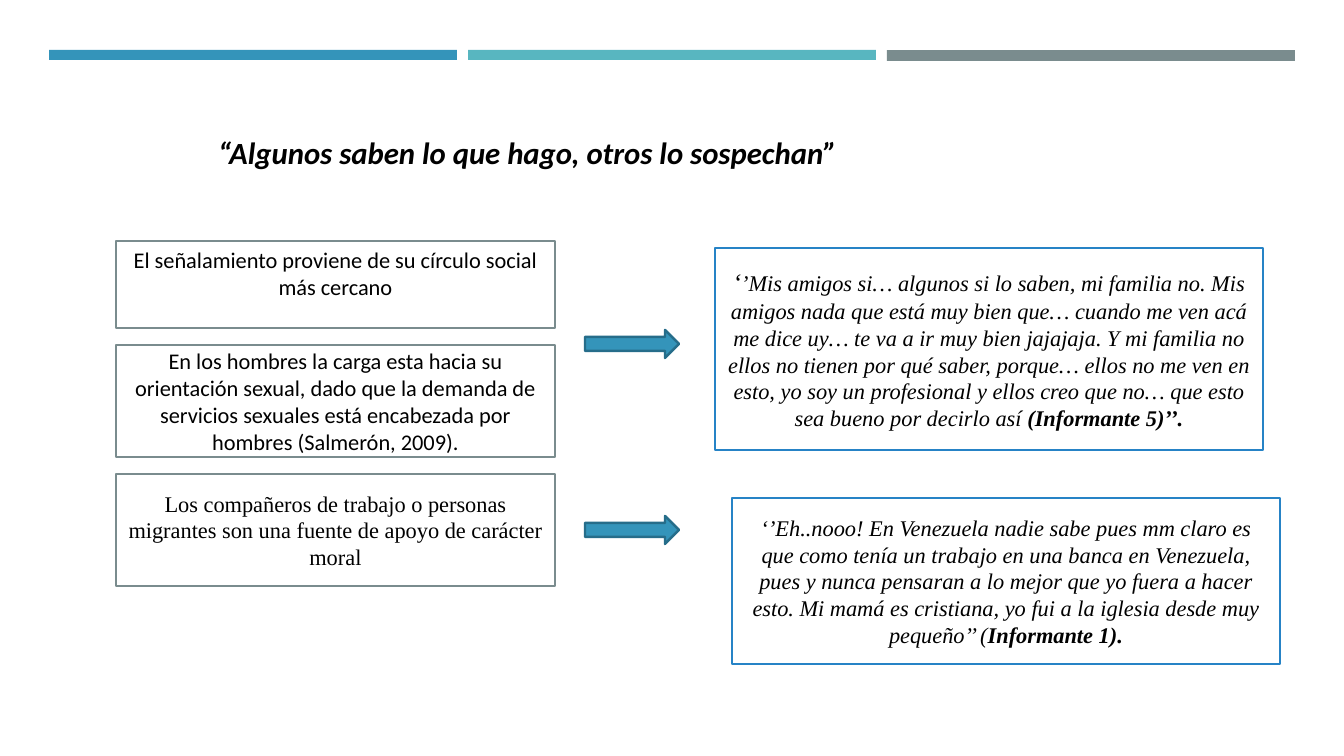
from pptx import Presentation
from pptx.dml.color import RGBColor
from pptx.enum.shapes import MSO_SHAPE
from pptx.enum.text import MSO_ANCHOR, MSO_AUTO_SIZE, PP_ALIGN
from pptx.util import Pt

EMU_PER_PX = 12192000 / 1344


def px(length):
    return round(length * EMU_PER_PX)


def add_block(preset, left, top, width, height, fill, line=None):
    block = slide.shapes.add_shape(preset, px(left), px(top), px(width), px(height))
    block.shadow.inherit = False
    block.fill.solid()
    block.fill.fore_color.rgb = RGBColor.from_string(fill)
    if line:
        block.line.color.rgb = RGBColor.from_string(line)
        block.line.width = Pt(1.75)
    else:
        block.line.fill.background()
    return block


deck = Presentation()
deck.slide_width = px(1344)
deck.slide_height = px(756)
slide = deck.slides.add_slide(deck.slide_layouts[5])

for column, (bar_color, bar_height) in enumerate([("3494BA", 10), ("58B6C0", 10), ("7A8C8E", 11)]):
    add_block(MSO_SHAPE.RECTANGLE, 49 + column * 419, 50, 408, bar_height, bar_color)

title = slide.shapes.title
title.left, title.top, title.width, title.height = px(208), px(129), px(699), px(47)
title.text_frame.text = "“Algunos saben lo que hago, otros lo sospechan”"
title.text_frame.word_wrap = True
title.text_frame.auto_size = MSO_AUTO_SIZE.NONE
title.text_frame.vertical_anchor = MSO_ANCHOR.MIDDLE
title.text_frame.paragraphs[0].alignment = PP_ALIGN.LEFT
title_font = title.text_frame.paragraphs[0].runs[0].font
title_font.name = "Calibri"
title_font.size = Pt(22)
title_font.bold = True
title_font.italic = True
title_font.color.rgb = RGBColor.from_string("000000")

findings = [
    (241, 87, "Calibri", MSO_ANCHOR.TOP,
     "El señalamiento proviene de su círculo social más cercano"),
    (345, 112, "Calibri", MSO_ANCHOR.MIDDLE,
     "En los hombres la carga esta hacia su orientación sexual, dado que la demanda "
     "de servicios sexuales está encabezada por hombres (Salmerón, 2009)."),
    (474, 112, "Times New Roman", MSO_ANCHOR.MIDDLE,
     "Los compañeros de trabajo o personas migrantes son una fuente de apoyo de carácter moral"),
]
for top, height, typeface, anchor, finding in findings:
    finding_box = add_block(MSO_SHAPE.RECTANGLE, 116, top, 439, height, "FFFFFF", "7A8C8E")
    finding_box.text_frame.text = finding
    finding_box.text_frame.word_wrap = True
    finding_box.text_frame.vertical_anchor = anchor
    finding_line = finding_box.text_frame.paragraphs[0]
    finding_line.alignment = PP_ALIGN.CENTER
    finding_font = finding_line.runs[0].font
    finding_font.name = typeface
    finding_font.size = Pt(16)
    finding_font.color.rgb = RGBColor.from_string("000000")

quotes = [
    (715, 248, 202, [
        ("‘", 18, False),
        ("’Mis amigos si… algunos si lo saben, mi familia no. Mis amigos nada que está muy "
         "bien que… cuando me ven acá me dice uy… te va a ir muy bien jajajaja. Y mi familia "
         "no ellos no tienen por qué saber, porque… ellos no me ven en esto, yo soy un "
         "profesional y ellos creo que no… que esto sea bueno por decirlo así", 16, False),
        (" (Informante 5)’’.", 16, True),
    ]),
    (732, 498, 166, [
        ("‘’Eh..nooo! En Venezuela nadie sabe pues mm claro es que como tenía un trabajo en "
         "una banca en Venezuela, pues y nunca pensaran a lo mejor que yo fuera a hacer esto. "
         "Mi mamá es cristiana, yo fui a la iglesia desde muy pequeño’’ (", 16, False),
        ("Informante 1).", 16, True),
    ]),
]
for left, top, height, passages in quotes:
    quote_box = add_block(MSO_SHAPE.RECTANGLE, left, top, 548, height, "FFFFFF", "2683C6")
    quote_box.text_frame.word_wrap = True
    quote_box.text_frame.vertical_anchor = MSO_ANCHOR.MIDDLE
    quote = quote_box.text_frame.paragraphs[0]
    quote.alignment = PP_ALIGN.CENTER
    for words, size, bold in passages:
        passage = quote.add_run()
        passage.text = words
        passage.font.name = "Times New Roman"
        passage.font.size = Pt(size)
        passage.font.bold = bold
        passage.font.italic = True
        passage.font.color.rgb = RGBColor.from_string("000000")

for arrow_top in (330, 516):
    add_block(MSO_SHAPE.RIGHT_ARROW, 585, arrow_top, 94, 28, "3494BA", "266D8A")

deck.save("out.pptx")
